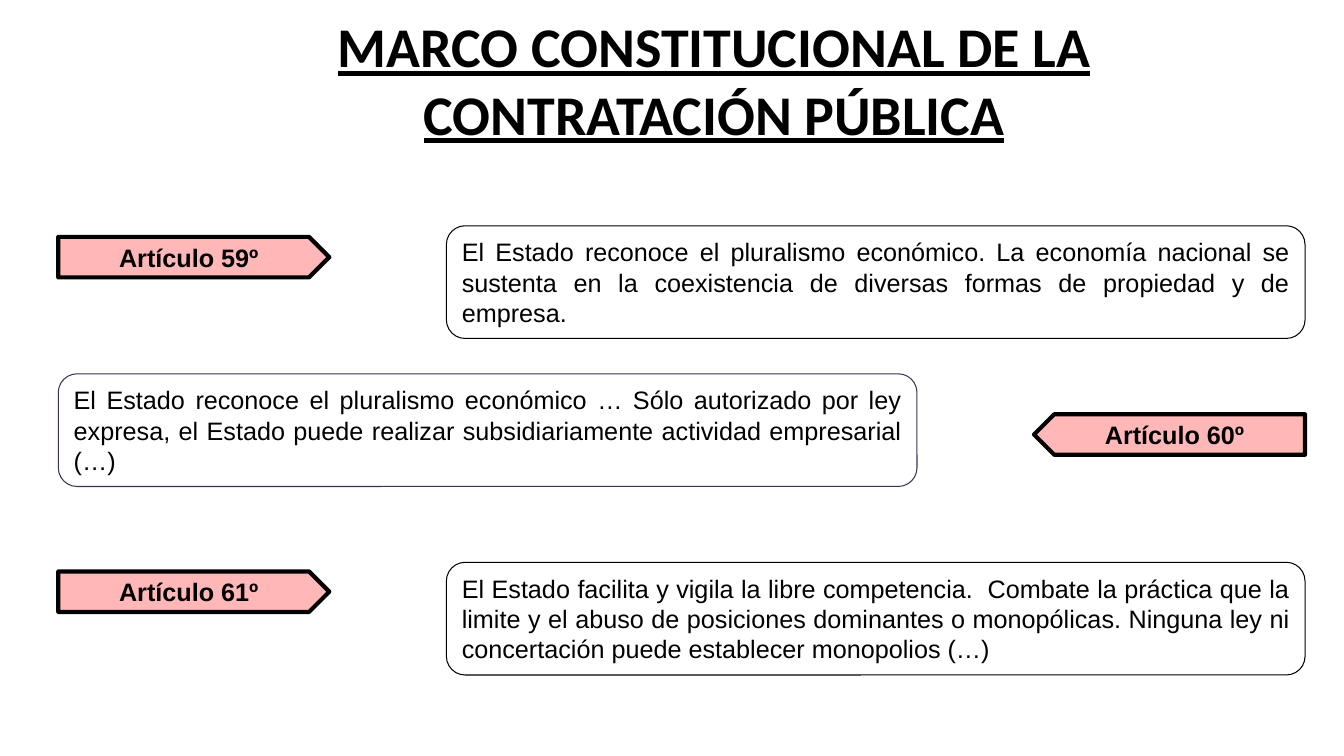
from pptx import Presentation
from pptx.dml.color import RGBColor
from pptx.enum import shapes, text
from pptx.util import Cm, Pt

COLORS = {"ink": "000000", "pink": "FFB7B7", "white": "FFFFFF", "violet": "403152"}
TAG_SIZE = (6.83, 1.02)
CARD_WIDTH = 21.64
ROW_LEFT, ROW_WIDTH, ROW_HEIGHT = 1.47, 31.42, 2.84

TITLE_FONT = {"name": "Calibri", "size": Pt(40), "bold": True, "underline": True}
TAG_FONT = {"name": "Arial", "size": Pt(18), "bold": True}
CARD_FONT = {"name": "Arial", "size": Pt(18), "bold": False}

# Row top, tag offset from the row top, tag on the right, card outline, tag, card
ARTICLES = [
    (5.69, 0.28, False, "ink", "Artículo 59º",
     "El Estado reconoce el pluralismo económico. La economía nacional se sustenta "
     "en la coexistencia de diversas formas de propiedad y de empresa."),
    (9.42, 1.02, True, "violet", "Artículo 60º",
     "El Estado reconoce el pluralismo económico … Sólo autorizado por ley expresa, "
     "el Estado puede realizar subsidiariamente actividad empresarial (…)"),
    (14.17, 0.23, False, "ink", "Artículo 61º",
     "El Estado facilita y vigila la libre competencia.  Combate la práctica que la "
     "limite y el abuso de posiciones dominantes o monopólicas. Ninguna ley ni "
     "concertación puede establecer monopolios (…)"),
]


def color(name):
    return RGBColor.from_string(COLORS[name])


def write(shape, words, font, alignment):
    frame = shape.text_frame
    frame.word_wrap = True
    frame.vertical_anchor = text.MSO_ANCHOR.MIDDLE
    paragraph = frame.paragraphs[0]
    paragraph.alignment = alignment
    run = paragraph.add_run()
    run.text = words
    for attribute, value in font.items():
        setattr(run.font, attribute, value)
    run.font.color.rgb = color("ink")


def add_outlined(slide, kind, box, fill, line, weight):
    shape = slide.shapes.add_shape(kind, *map(Cm, box))
    shape.shadow.inherit = False
    shape.fill.solid()
    shape.fill.fore_color.rgb = color(fill)
    shape.line.color.rgb = color(line)
    shape.line.width = Pt(weight)
    return shape


def add_title(slide, box, words):
    title = slide.shapes.add_textbox(*map(Cm, box))
    for side in ("left", "top", "right", "bottom"):
        setattr(title.text_frame, f"margin_{side}", 0)
    write(title, words, TITLE_FONT, text.PP_ALIGN.CENTER)


def add_article(slide, box, tag_offset, tag_on_right, outline, label, body):
    """Place an arrow tag and its text card at opposite ends of the box."""
    left, top, width, height = box
    tag_width, tag_height = TAG_SIZE
    tag_left, card_left = left, left + width - CARD_WIDTH
    if tag_on_right:
        tag_left, card_left = left + width - tag_width, left

    tag = add_outlined(slide, shapes.MSO_SHAPE.PENTAGON,
                       (tag_left, top + tag_offset, tag_width, tag_height),
                       "pink", "ink", 3)
    if tag_on_right:
        tag._element.spPr.xfrm.set("flipH", "1")
    write(tag, label, TAG_FONT, text.PP_ALIGN.CENTER)

    card = add_outlined(slide, shapes.MSO_SHAPE.ROUNDED_RECTANGLE,
                        (card_left, top, CARD_WIDTH, height), "white", outline, 0.75)
    write(card, body, CARD_FONT, text.PP_ALIGN.JUSTIFY)


def main():
    presentation = Presentation()
    presentation.slide_width, presentation.slide_height = Cm(33.87), Cm(19.05)
    slide = presentation.slides.add_slide(presentation.slide_layouts[6])
    for top, *article in ARTICLES:
        add_article(slide, (ROW_LEFT, top, ROW_WIDTH, ROW_HEIGHT), *article)
    add_title(slide, (5.51, 0.28, 24.97, 3.43),
              "MARCO CONSTITUCIONAL DE LA CONTRATACIÓN PÚBLICA")
    presentation.save("out.pptx")


if __name__ == "__main__":
    main()
